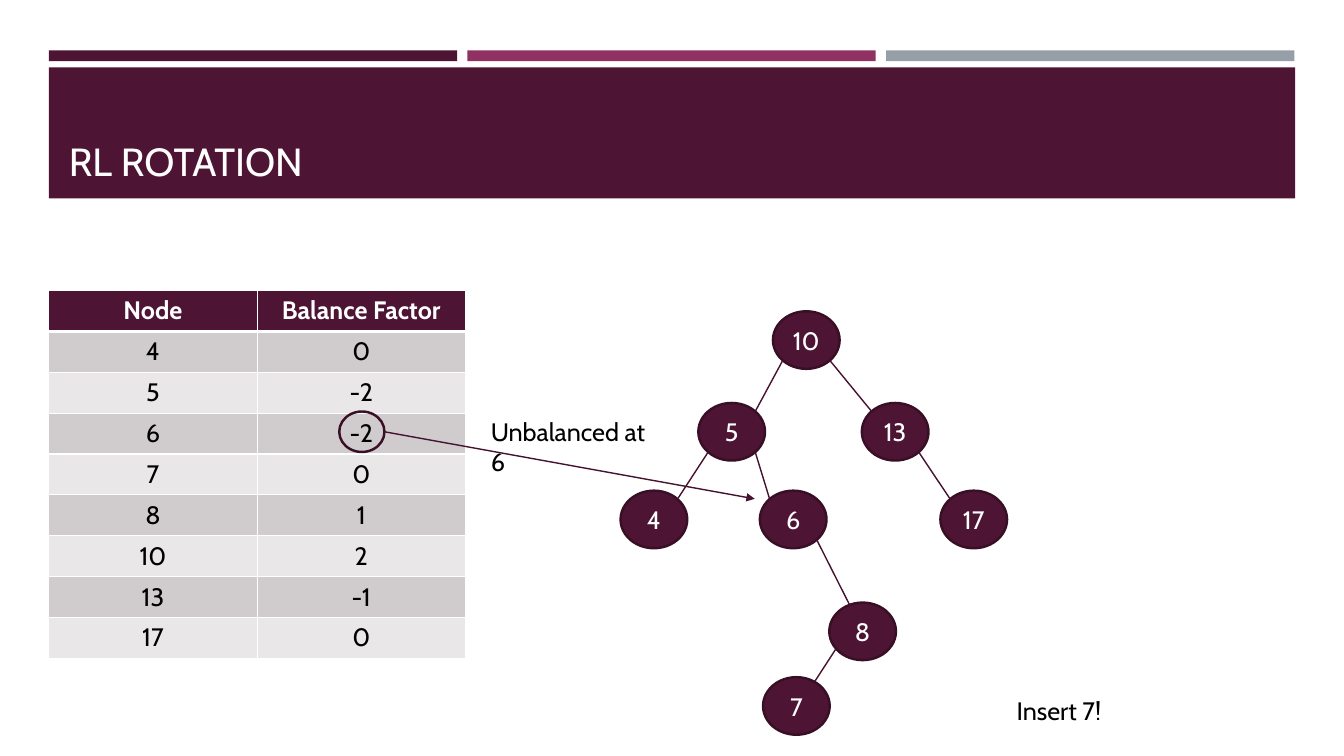
"""Build the slide on RL rotation: balance factor table beside the unbalanced tree."""
import math

import lxml.etree
import pptx
import pptx.dml.color
import pptx.enum.shapes
import pptx.enum.text
import pptx.oxml.ns
import pptx.util

Cm, Pt, qn = pptx.util.Cm, pptx.util.Pt, pptx.oxml.ns.qn
RGB = pptx.dml.color.RGBColor.from_string
SHAPE = pptx.enum.shapes.MSO_SHAPE
ALIGN = pptx.enum.text.PP_ALIGN
ANCHOR = pptx.enum.text.MSO_ANCHOR
COLORS = {
    "plum": "4D1434", "magenta": "903163", "grey": "969FA7",
    "outline": "390F26", "edge": "45122F", "white": "FFFFFF",
    "black": "000000", "odd_row": "D0CCCE", "even_row": "E9E7E8",
}


def write(frame, text, size=18, color="black", bold=False, align=ALIGN.LEFT,
          anchor=ANCHOR.TOP, wrap=True):
    frame.text = text
    frame.word_wrap = wrap
    frame.vertical_anchor = anchor
    paragraph = frame.paragraphs[0]
    paragraph.alignment = align
    font = paragraph.runs[0].font
    font.name, font.size, font.bold = "Cabin", Pt(size), bold
    font.color.rgb = RGB(COLORS[color])


def connect(start, end):
    line = slide.shapes.add_connector(
        pptx.enum.shapes.MSO_CONNECTOR.STRAIGHT, *map(Cm, start + end))
    line.line.color.rgb = RGB(COLORS["edge"])
    line.line.width = Pt(1)
    lxml.etree.SubElement(line.element.spPr, qn("a:effectLst"))
    return line


deck = pptx.Presentation()
deck.slide_width, deck.slide_height = Cm(33.87), Cm(19.05)
slide = deck.slides.add_slide(deck.slide_layouts[5])

banner_parts = [
    (1.23 + 10.55 * i, 1.27, 10.29, 0.27, color)
    for i, color in enumerate(["plum", "magenta", "grey"])
]
banner_parts.append((1.23, 1.7, 31.41, 3.3, "plum"))
for *place, color in banner_parts:
    bar = slide.shapes.add_shape(SHAPE.RECTANGLE, *map(Cm, place))
    bar.shadow.inherit = False
    bar.fill.solid()
    bar.fill.fore_color.rgb = RGB(COLORS[color])
    bar.line.fill.background()

title = slide.shapes.title
title.left, title.top, title.width, title.height = map(Cm, (1.48, 1.96, 30.63, 2.82))
write(title.text_frame, "RL ROTATION", size=28, color="white", anchor=ANCHOR.BOTTOM)
title.text_frame.auto_size = pptx.enum.text.MSO_AUTO_SIZE.NONE
slide.shapes.element.append(title.element)

node_width, node_height = 1.68, 1.45
node_centers = {
    10: (20.32, 8.57), 5: (18.44, 10.88), 17: (24.54, 13.09), 13: (22.56, 10.88),
    6: (19.99, 13.09), 8: (21.74, 15.91), 4: (16.48, 13.09), 7: (20.07, 17.79),
}
for key, (x, y) in node_centers.items():
    node = slide.shapes.add_shape(
        SHAPE.OVAL, Cm(x - node_width / 2), Cm(y - node_height / 2),
        Cm(node_width), Cm(node_height))
    node.shadow.inherit = False
    node.fill.solid()
    node.fill.fore_color.rgb = RGB(COLORS["plum"])
    node.line.color.rgb = RGB(COLORS["outline"])
    node.line.width = Pt(1.75)
    node.text_frame.margin_left = node.text_frame.margin_right = 0
    write(node.text_frame, str(key), color="white", align=ALIGN.CENTER,
          anchor=ANCHOR.MIDDLE)

tree_edges = [
    (10, 5, 45, 45), (5, 4, 45, 45), (6, 8, 45, 67), (5, 6, 45, 45),
    (10, 13, 45, 45), (13, 17, 45, 45), (8, 7, 37, 57),
]
for parent, child, parent_angle, child_angle in tree_edges:
    (px, py), (cx, cy) = node_centers[parent], node_centers[child]
    side = math.copysign(1, cx - px)
    leave, arrive = math.radians(parent_angle), math.radians(child_angle)
    connect(
        (px + side * node_width / 2 * math.cos(leave),
         py + node_height / 2 * math.sin(leave)),
        (cx - side * node_width / 2 * math.cos(arrive),
         cy - node_height / 2 * math.sin(arrive)))

balance_rows = [
    ("Node", "Balance Factor"), ("4", "0"), ("5", "-2"), ("6", "-2"), ("7", "0"),
    ("8", "1"), ("10", "2"), ("13", "-1"), ("17", "0"),
]
balance_table = slide.shapes.add_table(
    len(balance_rows), 2, Cm(1.23), Cm(7.32), Cm(10.5), Cm(9.27)).table
for r, row in enumerate(balance_rows):
    balance_table.rows[r].height = Cm(1.03)
    fill = "plum" if r == 0 else "odd_row" if r % 2 else "even_row"
    for c, text in enumerate(row):
        cell = balance_table.cell(r, c)
        cell.fill.solid()
        cell.fill.fore_color.rgb = RGB(COLORS[fill])
        write(cell.text_frame, text, color="black" if r else "white",
              bold=r == 0, align=ALIGN.CENTER)
        properties = cell.text_frame._txBody.getparent().find(qn("a:tcPr"))
        for position, edge in enumerate(["lnL", "lnR", "lnT", "lnB"]):
            under_header = (r, edge) in [(0, "lnB"), (1, "lnT")]
            border = lxml.etree.Element(
                qn("a:" + edge), w=str(Pt(3 if under_header else 1)))
            paint = lxml.etree.SubElement(border, qn("a:solidFill"))
            lxml.etree.SubElement(paint, qn("a:srgbClr"), val=COLORS["white"])
            properties.insert(position, border)

ring = slide.shapes.add_shape(SHAPE.OVAL, Cm(8.55), Cm(10.37), Cm(1.14), Cm(1.02))
ring.shadow.inherit = False
ring.fill.background()
ring.line.color.rgb = RGB(COLORS["outline"])
ring.line.width = Pt(1.75)

pointer = connect((9.69, 10.88), (19.02, 12.57))
lxml.etree.SubElement(pointer.line._get_or_add_ln(), qn("a:tailEnd"), type="triangle")

for text, *place in [
    ("Insert 7!", 25.37, 17.4, 2.8, 1.02),
    ("Unbalanced at 6", 12.12, 10.37, 4.7, 1.8),
]:
    caption = slide.shapes.add_textbox(*map(Cm, place))
    write(caption.text_frame, text)

deck.save("out.pptx")
